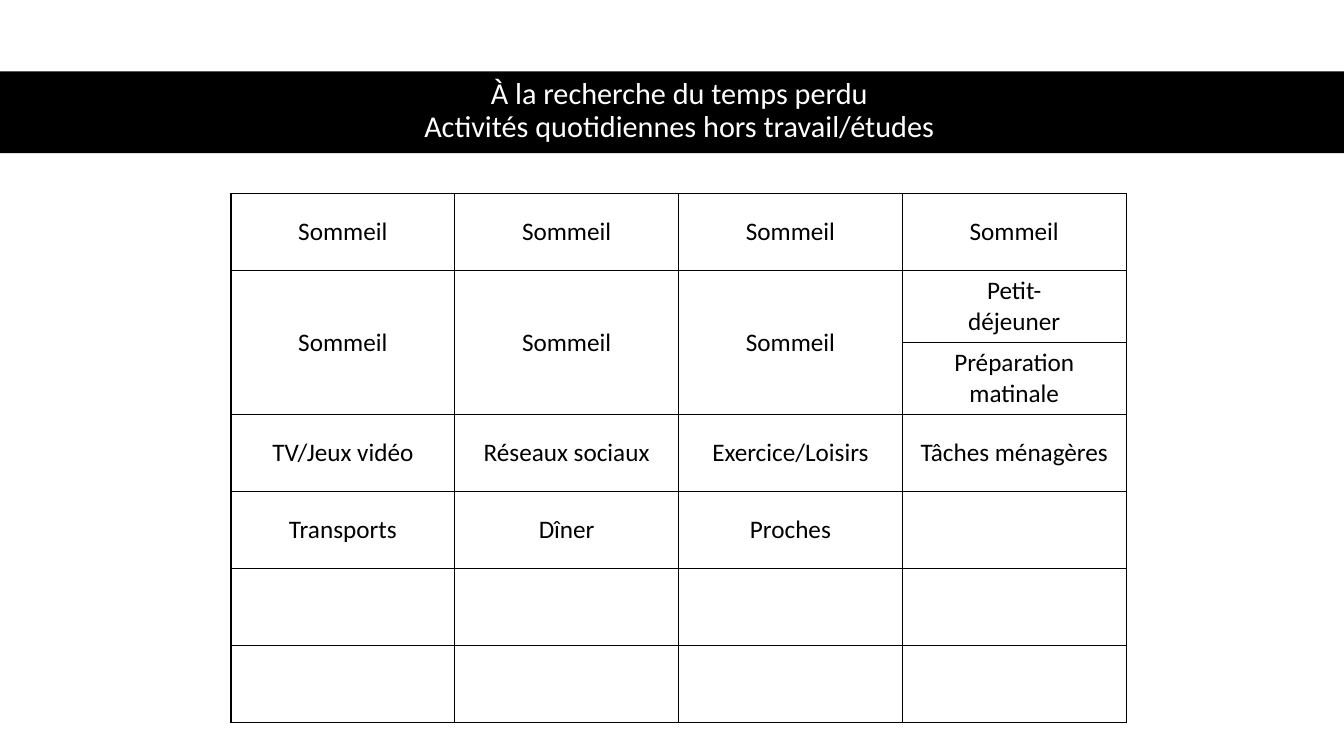
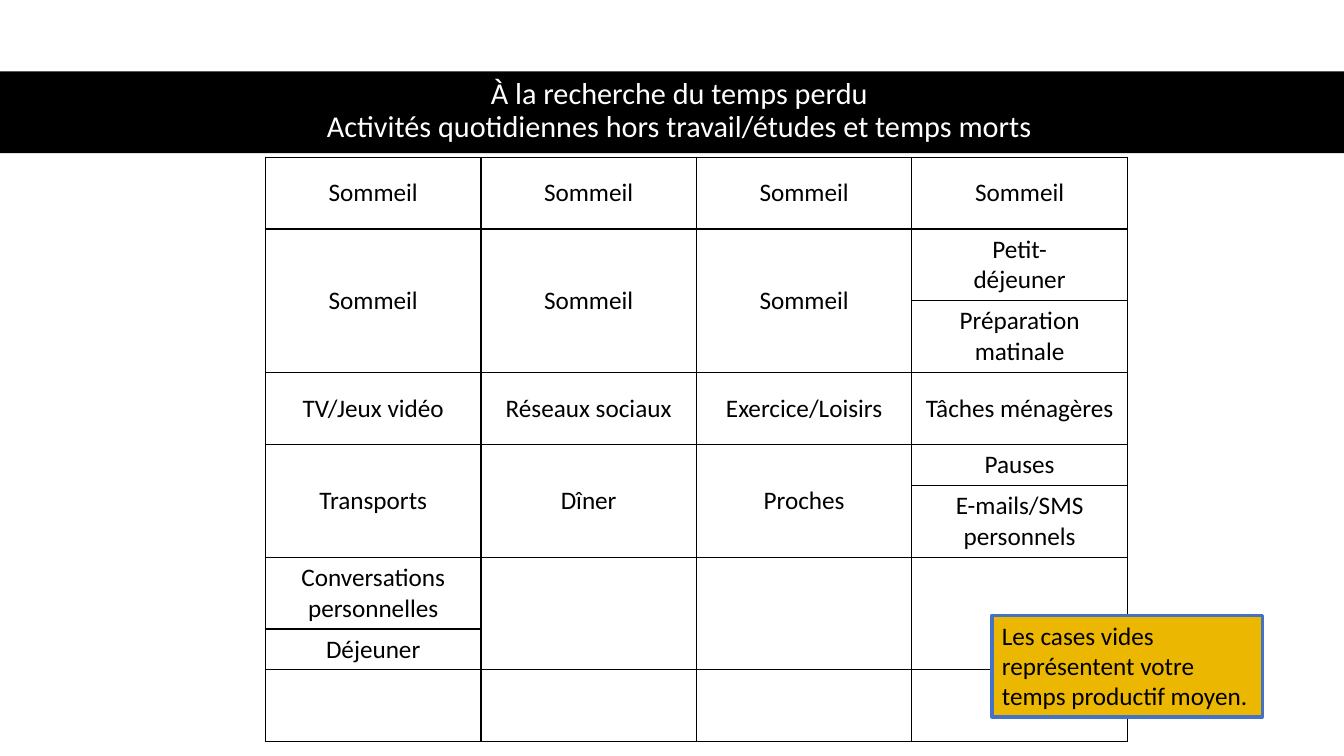
from dataclasses import dataclass

from lxml.etree import SubElement
from pptx import Presentation
from pptx.dml.color import RGBColor
from pptx.enum.shapes import MSO_SHAPE
from pptx.enum.text import MSO_ANCHOR, MSO_AUTO_SIZE, PP_ALIGN
from pptx.oxml.ns import qn
from pptx.util import Cm, Pt


@dataclass(frozen=True)
class Theme:
    """Colours, font and type sizes shared by the slides."""
    black: str = "000000"
    white: str = "FFFFFF"
    gold: str = "EBB700"
    blue: str = "4472C4"
    font: str = "Calibri"
    title_size: float = 21.6
    body_size: float = 18
    border_width: float = 1
    note_border_width: float = 2.25


THEME = Theme()
SLIDE_WIDTH, SLIDE_HEIGHT = Cm(33.87), Cm(19.05)
BAND_TOP, BAND_HEIGHT = Cm(1.8), Cm(2.06)
FULL_ROW, SPLIT_ROW, SHORT_ROW = 1.94, 1.81, 1.03

SHARED_ROWS = [
    ["Sommeil"] * 4,
    ["Sommeil"] * 3 + ["Petit-\vdéjeuner"],
    [None] * 3 + ["Préparation matinale"],
    ["TV/Jeux vidéo", "Réseaux sociaux", "Exercice/Loisirs", "Tâches ménagères"],
]
EMPTY_ROW = [""] * 4
DAILY_ROWS = SHARED_ROWS + [
    ["Transports", "Dîner", "Proches", ""],
    EMPTY_ROW,
    EMPTY_ROW,
]
IDLE_ROWS = SHARED_ROWS + [
    ["Transports", "Dîner", "Proches", "Pauses"],
    [None] * 3 + ["E-mails/SMS personnels"],
    ["Conversations personnelles", "", "", ""],
    ["Déjeuner", None, None, None],
    EMPTY_ROW,
]


def write_text(frame, text, *, size=THEME.body_size, color=THEME.black,
               align=PP_ALIGN.CENTER, spacing=None):
    """Write one formatted paragraph into a text frame."""
    frame.word_wrap = True
    paragraph = frame.paragraphs[0]
    paragraph.text = text
    paragraph.alignment = align
    paragraph.line_spacing = spacing
    for run in paragraph.runs:
        run.font.name = THEME.font
        run.font.size = Pt(size)
        run.font.color.rgb = RGBColor.from_string(color)


def add_box(slide, left, top, width, height, *, fill, line=None):
    """Add a filled rectangle with an optional outline."""
    box = slide.shapes.add_shape(MSO_SHAPE.RECTANGLE, left, top, width, height)
    box.shadow.inherit = False
    box.fill.solid()
    box.fill.fore_color.rgb = RGBColor.from_string(fill)
    if line:
        box.line.color.rgb = RGBColor.from_string(line)
        box.line.width = Pt(THEME.note_border_width)
    else:
        box.line.fill.background()
    return box


def add_title(slide, subject):
    """Add the black band with the series title and the slide's subject."""
    add_box(slide, 0, BAND_TOP, SLIDE_WIDTH, BAND_HEIGHT, fill=THEME.black)
    title = slide.shapes.add_textbox(Cm(1.55), Cm(1.78), Cm(31.14), BAND_HEIGHT)
    title.text_frame.vertical_anchor = MSO_ANCHOR.MIDDLE
    write_text(title.text_frame, f"À la recherche du temps perdu\v{subject}",
               size=THEME.title_size, color=THEME.white, spacing=0.9)


def set_borders(cell):
    """Draw a thin black line on the four sides of a cell."""
    properties = cell._tc.get_or_add_tcPr()
    for position, side in enumerate(("lnL", "lnR", "lnT", "lnB")):
        border = properties.makeelement(
            qn(f"a:{side}"), {"w": str(Pt(THEME.border_width))})
        fill = SubElement(border, qn("a:solidFill"))
        SubElement(fill, qn("a:srgbClr"), val=THEME.black)
        properties.insert(position, border)


def add_activity_grid(slide, rows, heights, *, left, top, column_width):
    """Add the activity table, where None continues the cell above."""
    column_count = len(rows[0])
    grid = slide.shapes.add_table(
        len(rows), column_count, Cm(left), Cm(top),
        Cm(column_width * column_count), Cm(sum(heights))).table
    grid.first_row = grid.horz_banding = False
    for column in grid.columns:
        column.width = Cm(column_width)
    for row_index, (activities, height) in enumerate(zip(rows, heights)):
        grid.rows[row_index].height = Cm(height)
        for column_index, activity in enumerate(activities):
            cell = grid.cell(row_index, column_index)
            cell.fill.background()
            set_borders(cell)
            cell.vertical_anchor = MSO_ANCHOR.MIDDLE
            if activity is None:
                grid.cell(row_index - 1, column_index).merge(cell)
            elif activity:
                write_text(cell.text_frame, activity)


def add_note(slide, text):
    """Add the gold note that explains the empty cells."""
    note = add_box(slide, Cm(25), Cm(15.5), Cm(6.81), Cm(2.57),
                   fill=THEME.gold, line=THEME.blue)
    note.text_frame.vertical_anchor = MSO_ANCHOR.TOP
    write_text(note.text_frame, text, align=PP_ALIGN.LEFT)
    note.text_frame.auto_size = MSO_AUTO_SIZE.SHAPE_TO_FIT_TEXT


def main():
    """Build and save the two slides."""
    deck = Presentation()
    deck.slide_width, deck.slide_height = SLIDE_WIDTH, SLIDE_HEIGHT
    blank = deck.slide_layouts[6]

    daily = deck.slides.add_slide(blank)
    add_title(daily, "Activités quotidiennes hors travail/études")
    daily_heights = [FULL_ROW] + [SPLIT_ROW] * 2 + [FULL_ROW] * 4
    add_activity_grid(daily, DAILY_ROWS, daily_heights,
                      left=5.82, top=4.88, column_width=5.64)

    idle = deck.slides.add_slide(blank)
    add_title(idle, "Activités quotidiennes hors travail/études et temps morts")
    idle_heights = [SPLIT_ROW] * 4 + [SHORT_ROW] + [SPLIT_ROW] * 2 + [SHORT_ROW, SPLIT_ROW]
    add_activity_grid(idle, IDLE_ROWS, idle_heights,
                      left=6.69, top=3.96, column_width=5.43)
    add_note(idle, "Les cases vides représentent votre temps productif moyen.")

    deck.save("out.pptx")


if __name__ == "__main__":
    main()
